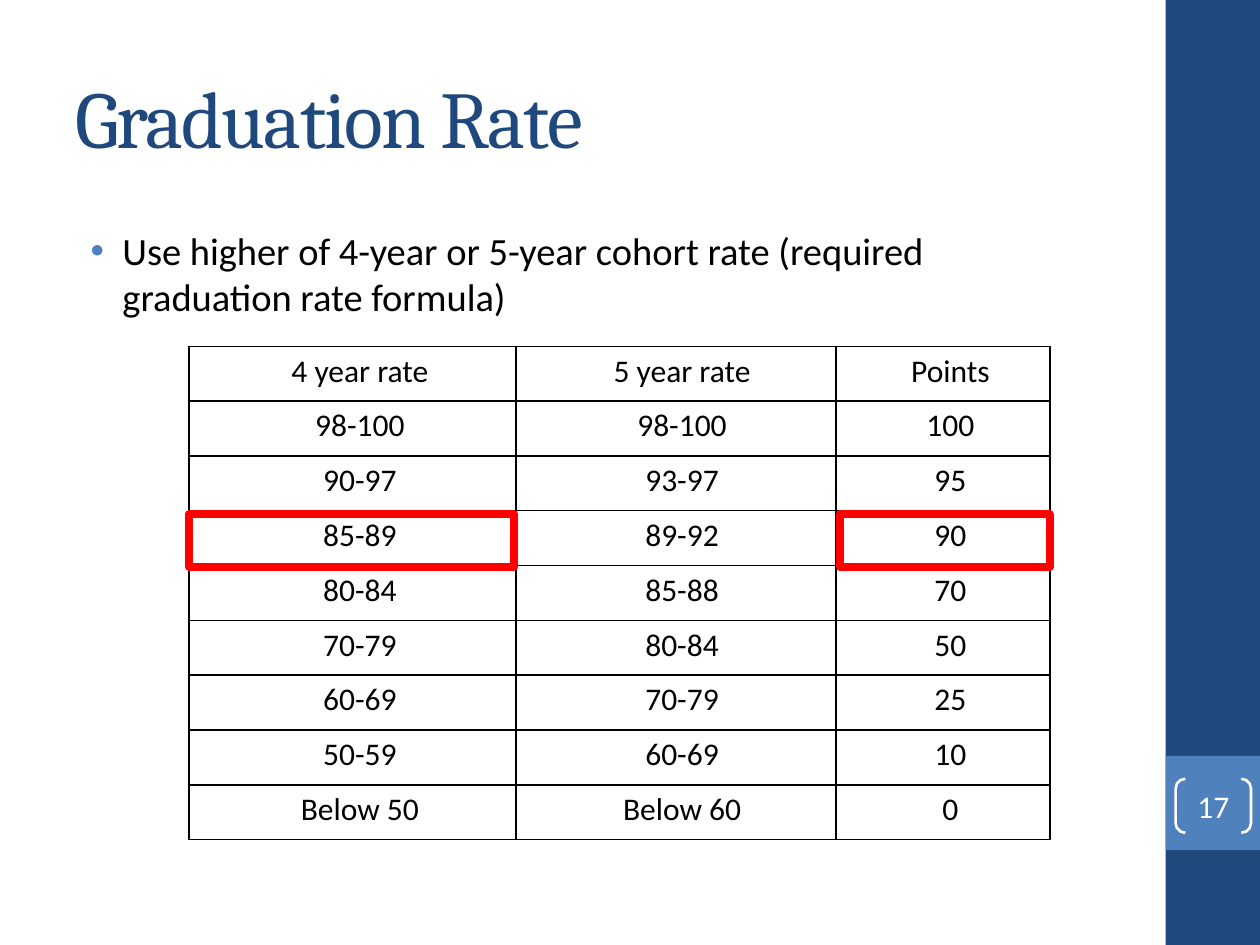
import pptx
import pptx.dml.color
import pptx.enum.shapes
import pptx.enum.text
import pptx.oxml
import pptx.oxml.ns
import pptx.util
from pptx.util import Cm

ALIGN = pptx.enum.text.PP_ALIGN
ANCHOR = pptx.enum.text.MSO_ANCHOR
SHAPE = pptx.enum.shapes.MSO_SHAPE
NAMESPACE = pptx.oxml.ns.nsdecls("a")

RATES = [
    ("4 year rate", "5 year rate", "Points"),
    ("98-100", "98-100", "100"),
    ("90-97", "93-97", "95"),
    ("85-89", "89-92", "90"),
    ("80-84", "85-88", "70"),
    ("70-79", "80-84", "50"),
    ("60-69", "70-79", "25"),
    ("50-59", "60-69", "10"),
    ("Below 50", "Below 60", "0"),
]


def color(value):
    return pptx.dml.color.RGBColor.from_string(value)


class SlideBuilder:
    navy, blue, red, black, white = "1F497D", "4F81BD", "FF0000", "000000", "FFFFFF"
    heading_font, body_font = "Cambria", "Calibri"

    def __init__(self, deck):
        self.page = deck.slides.add_slide(deck.slide_layouts[6])
        self.page.background.fill.solid()
        self.page.background.fill.fore_color.rgb = color(self.white)

    def set_text(self, frame, text, size, text_color, font=body_font):
        frame.text = text
        para = frame.paragraphs[0]
        span = para.runs[0]
        span.font.size = pptx.util.Pt(size)
        span.font.name = font
        span.font.color.rgb = color(text_color)
        return para

    def shape(self, kind, left, top, width, height, fill=None, line=None, weight=1):
        box = self.page.shapes.add_shape(kind, Cm(left), Cm(top), Cm(width), Cm(height))
        box.shadow.inherit = False
        if fill:
            box.fill.solid()
            box.fill.fore_color.rgb = color(fill)
        else:
            box.fill.background()
        if line:
            box.line.color.rgb = color(line)
            box.line.width = pptx.util.Pt(weight)
        else:
            box.line.fill.background()
        return box

    def text_box(self, left, top, width, height, anchor):
        box = self.page.shapes.add_textbox(Cm(left), Cm(top), Cm(width), Cm(height))
        box.text_frame.word_wrap = True
        box.text_frame.vertical_anchor = anchor
        return box.text_frame

    def title(self, text):
        frame = self.text_box(1.27, 0.76, 21.16, 3.18, ANCHOR.MIDDLE)
        para = self.set_text(frame, text, 46, self.navy, self.heading_font)
        para.runs[0].font._element.set("spc", "-100")

    def bullet(self, text):
        frame = self.text_box(1.27, 4.45, 21.16, 13.33, ANCHOR.TOP)
        para = self.set_text(frame, text, 22, self.black)
        para.space_before = pptx.util.Pt(4.4)
        properties = para._p.get_or_add_pPr()
        properties.set("marL", str(Cm(0.95)))
        properties.set("indent", str(Cm(-0.64)))
        for markup in (
            f'<a:buClr {NAMESPACE}><a:srgbClr val="{self.blue}"/></a:buClr>',
            f'<a:buFont {NAMESPACE} typeface="Arial"/>',
            f'<a:buChar {NAMESPACE} char="•"/>',
        ):
            properties.append(pptx.oxml.parse_xml(markup))

    def page_number(self, text):
        box = self.shape(SHAPE.DOUBLE_BRACKET, 23.7, 15.7, 1.52, 1.09, line=self.white, weight=1.5)
        box.adjustments[0] = 0.18
        frame = box.text_frame
        frame.margin_left = frame.margin_right = frame.margin_top = frame.margin_bottom = 0
        frame.vertical_anchor = ANCHOR.MIDDLE
        self.set_text(frame, text, 18, self.white).alignment = ALIGN.CENTER

    def border(self, cell):
        properties = cell._tc.get_or_add_tcPr()
        for side in "LRTB":
            properties.append(pptx.oxml.parse_xml(
                f'<a:ln{side} {NAMESPACE} w="{pptx.util.Pt(1)}"><a:solidFill>'
                f'<a:srgbClr val="{self.black}"/></a:solidFill></a:ln{side}>'
            ))

    def table(self, rows, left, top, widths, height, indents):
        frame = self.page.shapes.add_table(
            len(rows), len(widths), Cm(left), Cm(top), Cm(sum(widths)), Cm(height)
        )
        grid = frame.table
        grid.first_row = grid.horz_banding = False
        for column, width in zip(grid.columns, widths):
            column.width = Cm(width)
        for row, texts in zip(grid.rows, rows):
            row.height = Cm(height / len(rows))
            for cell, text, indent in zip(row.cells, texts, indents):
                cell.margin_left = cell.margin_right = Cm(0.18)
                cell.margin_top = cell.margin_bottom = 0
                self.border(cell)
                cell.fill.background()
                para = self.set_text(cell.text_frame, text, 18, self.black)
                para.alignment = ALIGN.CENTER
                para.line_spacing = 1.15
                para._p.get_or_add_pPr().set("marL", str(Cm(indent)))

    def highlight(self, left, width):
        self.shape(SHAPE.RECTANGLE, left, 10.37, width, 1.06, line=self.red, weight=4.5)


def main():
    deck = pptx.Presentation()
    deck.slide_width, deck.slide_height = Cm(25.4), Cm(19.05)
    slide = SlideBuilder(deck)
    slide.shape(SHAPE.RECTANGLE, 23.5, 0, 1.9, 19.05, fill=slide.navy)
    slide.shape(SHAPE.RECTANGLE, 23.5, 15.24, 1.9, 1.9, fill=slide.blue)
    slide.title("Graduation Rate")
    slide.bullet("Use higher of 4-year or 5-year cohort rate (required graduation rate formula)")
    slide.page_number("17")
    slide.table(RATES, 3.81, 6.98, (6.59, 6.45, 4.32), 9.95, (0.3, 0.25, 0.3))
    slide.highlight(3.81, 6.56)
    slide.highlight(16.93, 4.23)
    deck.save("out.pptx")


if __name__ == "__main__":
    main()
